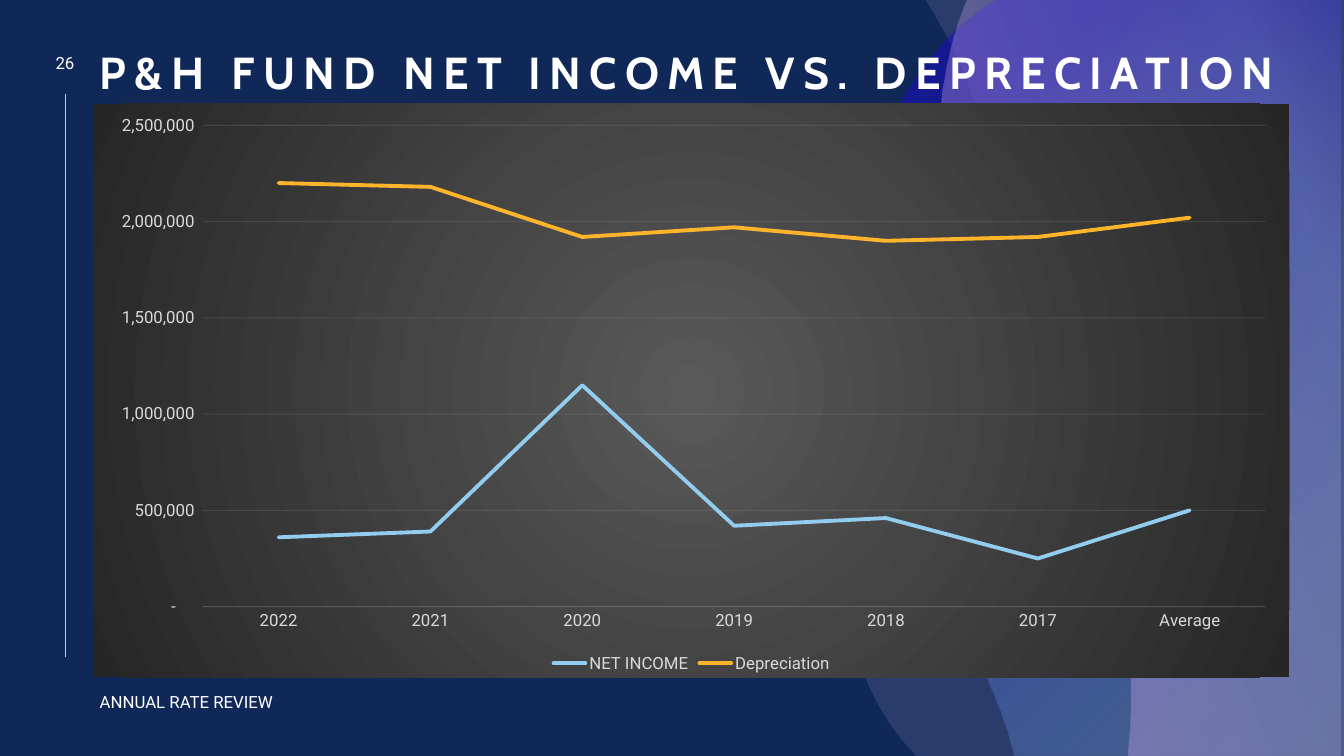
from dataclasses import dataclass
from math import cos, radians, sin

from lxml import etree
from pptx import Presentation
from pptx.chart.data import CategoryChartData
from pptx.dml.color import RGBColor as RGB
from pptx.enum.chart import XL_CHART_TYPE as ChartType
from pptx.enum.chart import XL_LEGEND_POSITION as LegendPos
from pptx.enum.chart import XL_TICK_MARK as Tick
from pptx.enum.shapes import MSO_CONNECTOR as Connector
from pptx.enum.text import MSO_ANCHOR as Anchor
from pptx.enum.text import MSO_AUTO_SIZE as AutoSize
from pptx.enum.text import PP_ALIGN as Align
from pptx.oxml import parse_xml
from pptx.oxml.ns import nsdecls, qn
from pptx.util import Inches, Pt


@dataclass(frozen=True)
class Theme:
    navy: str = "102857"
    white: str = "FFFFFF"
    pink: str = "F6A6F4"
    lilac: str = "C3B9F2"
    sky: str = "92CDF0"
    blue: str = "180DC2"
    amber: str = "FEB52B"
    label: str = "D9D9D9"
    grid: str = "F2F2F2"
    panel_mid: str = "595959"
    panel_edge: str = "262626"
    head_font: str = "Cabin"
    body_font: str = "Roboto"
    title_size: int = 32
    text_size: int = 12


def set_alpha(element, percent):
    for clr in element.iter(qn("a:srgbClr")):
        etree.SubElement(clr, qn("a:alpha"), val=str(percent * 1000))


def gradient(stops, angle=None, center=None):
    """Stops are (position, colour, opacity); center is left, top, right, bottom."""
    gs = "".join(
        f'<a:gs pos="{pos * 1000}"><a:srgbClr val="{color}">'
        f'<a:alpha val="{alpha * 1000}"/></a:srgbClr></a:gs>'
        for pos, color, alpha in stops)
    if center:
        sides = " ".join(f'{k}="{v * 1000}"' for k, v in zip("ltrb", center))
        way = f'<a:path path="circle"><a:fillToRect {sides}/></a:path>'
    else:
        way = f'<a:lin ang="{angle * 60000}" scaled="0"/>'
    return parse_xml(f'<a:gradFill {nsdecls("a")} rotWithShape="1">'
                     f'<a:gsLst>{gs}</a:gsLst>{way}</a:gradFill>')


def unrotate(nodes, angle):
    """Turn nodes back about the centre of their box; a node ends in its anchor."""
    xs, ys = zip(*(node[-2:] for node in nodes))
    cx, cy = (min(xs) + max(xs)) / 2, (min(ys) + max(ys)) / 2
    c, s = cos(radians(angle)), sin(radians(angle))
    return [[(Inches(cx + (x - cx) * c + (y - cy) * s),
              Inches(cy - (x - cx) * s + (y - cy) * c))
             for x, y in zip(node[::2], node[1::2])] for node in nodes]


class SlideMaker:
    def __init__(self, prs, theme):
        self.theme = theme
        self.slide = prs.slides.add_slide(prs.slide_layouts[5])
        fill = self.slide.background.fill
        fill.solid()
        fill.fore_color.rgb = RGB.from_string(theme.navy)

    def style(self, font, size, color, name=None):
        font.size = Pt(size)
        font.name = name or self.theme.body_font
        font.color.rgb = RGB.from_string(color)

    def line(self, x1, y1, x2, y2, color, width):
        s = self.slide.shapes.add_connector(
            Connector.STRAIGHT, Inches(x1), Inches(y1), Inches(x2), Inches(y2))
        s.line.color.rgb = RGB.from_string(color)
        s.line.width = Pt(width)
        etree.SubElement(s._element.spPr, qn("a:effectLst"))

    def wave(self, nodes, rotation, color=None, alpha=100, grad=None):
        """Nodes are corners (x, y) or curves (x1, y1, x2, y2, x, y)."""
        nodes = unrotate(nodes, rotation)
        builder = self.slide.shapes.build_freeform(*nodes[0][-1])
        builder.add_line_segments([node[-1] for node in nodes[1:]], close=True)
        s = builder.convert_to_shape()
        spPr = s._element.spPr
        # Bend the segments that have control points
        for seg, node in zip(list(spPr.iter(qn("a:lnTo"))), nodes[1:]):
            if len(node) == 3:
                seg.tag = qn("a:cubicBezTo")
                for i, (x, y) in enumerate(node[:2]):
                    pt = etree.Element(qn("a:pt"), x=str(x - s.left), y=str(y - s.top))
                    seg.insert(i, pt)
        s.rotation = rotation
        s.shadow.inherit = False
        s.line.fill.background()
        if grad is not None:
            s.fill.background()
            spPr.replace(spPr.find(qn("a:noFill")), grad)
        else:
            s.fill.solid()
            s.fill.fore_color.rgb = RGB.from_string(color)
            set_alpha(spPr, alpha)

    def text(self, x, y, w, h, text, align=Align.LEFT):
        box = self.slide.shapes.add_textbox(Inches(x), Inches(y), Inches(w), Inches(h))
        tf = box.text_frame
        tf.word_wrap = True
        tf.vertical_anchor = Anchor.MIDDLE
        tf.text = text
        p = tf.paragraphs[0]
        p.alignment = align
        p.space_after = Pt(6)
        self.style(p.runs[0].font, self.theme.text_size, self.theme.white)

    def title(self, x, y, w, h, text):
        s = self.slide.shapes.title
        self.slide.shapes._spTree.append(s._element)  # in front of the waves
        s.left, s.top, s.width, s.height = Inches(x), Inches(y), Inches(w), Inches(h)
        tf = s.text_frame
        tf.text = text
        tf.word_wrap = True
        tf.auto_size = AutoSize.NONE
        tf.vertical_anchor = Anchor.BOTTOM
        p = tf.paragraphs[0]
        p.alignment = Align.LEFT
        p.line_spacing = 0.9
        r = p.runs[0]
        self.style(r.font, self.theme.title_size, self.theme.white, self.theme.head_font)
        r.font.bold = True
        r.font._element.set("spc", "600")

    def faint_line(self, line):
        line.color.rgb = RGB.from_string(self.theme.grid)
        line.width = Pt(0.75)
        set_alpha(line._get_or_add_ln(), 10)

    def line_chart(self, x, y, w, h, categories, series, number_format):
        th = self.theme
        data = CategoryChartData()
        data.categories = categories
        for name, values, _ in series:
            data.add_series(name, values)
        chart = self.slide.shapes.add_chart(
            ChartType.LINE, Inches(x), Inches(y), Inches(w), Inches(h), data).chart
        self.style(chart.font, th.text_size, th.label)
        chart.has_title = False

        # Panel behind the plot
        spPr = parse_xml(f'<c:spPr {nsdecls("c", "a")}><a:ln><a:noFill/></a:ln></c:spPr>')
        spPr.insert(0, gradient([(0, th.panel_mid, 100), (100, th.panel_edge, 100)],
                                center=(50, 50, 50, 50)))
        chart._chartSpace.find(qn("c:chart")).addnext(spPr)

        # Axes and legend
        cat, val = chart.category_axis, chart.value_axis
        for axis in (cat, val):
            axis.major_tick_mark = axis.minor_tick_mark = Tick.NONE
            self.style(axis.tick_labels.font, th.text_size, th.label)
        self.faint_line(cat.format.line)
        self.faint_line(val.major_gridlines.format.line)
        val.format.line.fill.background()
        val.tick_labels.number_format = number_format
        val.tick_labels.number_format_is_linked = False
        chart.has_legend = True
        chart.legend.position = LegendPos.BOTTOM
        chart.legend.include_in_layout = False
        self.style(chart.legend.font, th.text_size, th.label)

        # Series
        plot = chart.plots[0]
        plot.vary_by_categories = False
        for ser, (_, _, color) in zip(plot.series, series):
            ser.smooth = False
            ser.format.line.color.rgb = RGB.from_string(color)
            ser.format.line.width = Pt(2.75)
            ser.format.line._get_or_add_ln().set("cap", "rnd")


def main():
    prs = Presentation()
    prs.slide_width, prs.slide_height = Inches(13.33), Inches(7.5)
    th = Theme()
    page = SlideMaker(prs, th)

    # Rule and waves on the right
    page.line(0.65, 0.93, 0.65, 6.52, th.pink, 0.5)
    page.wave([
        (9.18, 0), (13.34, 0), (13.34, 7.5), (9.09, 7.5), (9.08, 7.49),
        (8.7, 7.1, 8.38, 6.48, 8.39, 5.68), (8.4, 4.27, 9.8, 3.66, 9.83, 2.15),
        (9.85, 1.21, 9.5, 0.52, 9.2, 0.03)], 270, th.lilac, 14)
    page.wave([
        (9.88, 0), (13.3, 0), (13.3, 7.5), (10.06, 7.5), (10.01, 7.31),
        (9.56, 5.83, 8.4, 4.92, 8.39, 3.22), (8.38, 1.65, 9.09, 0.55, 9.73, 0.1)],
        90, grad=gradient([(4, th.sky, 24), (79, th.blue, 52)], center=(100, 100, 0, 0)))
    page.wave([
        (9.59, 0), (13.34, 0), (13.34, 7.5), (11.18, 7.5), (11.2, 7.21),
        (11.21, 7.08, 11.21, 6.94, 11.21, 6.81), (11.17, 4.58, 9.32, 3.68, 9.31, 1.59),
        (9.3, 1.06, 9.38, 0.59, 9.52, 0.18)],
        90, grad=gradient([(1, th.pink, 38), (84, th.lilac, 20), (100, th.pink, 3)], 250))

    # Page number, footer and title
    page.text(0.36, 0.45, 0.57, 0.34, "26", Align.CENTER)
    page.text(0.89, 6.81, 2.55, 0.3, "ANNUAL RATE REVIEW")
    page.title(0.89, -0.14, 12.45, 1.17, "P&H FUND NET INCOME VS. DEPRECIATION")

    # Income and depreciation by year
    page.line_chart(
        0.93, 1.03, 11.86, 5.69,
        ["2022", "2021", "2020", "2019", "2018", "2017", "Average"],
        [("NET INCOME",
          [360000, 390000, 1150000, 420000, 460000, 250000, 500000], th.sky),
         ("Depreciation",
          [2200000, 2180000, 1920000, 1970000, 1900000, 1920000, 2020000], th.amber)],
        r'_(* #,##0_);_(* \(#,##0\);_(* "-"??_);_(@_)')

    prs.save("out.pptx")


if __name__ == "__main__":
    main()
